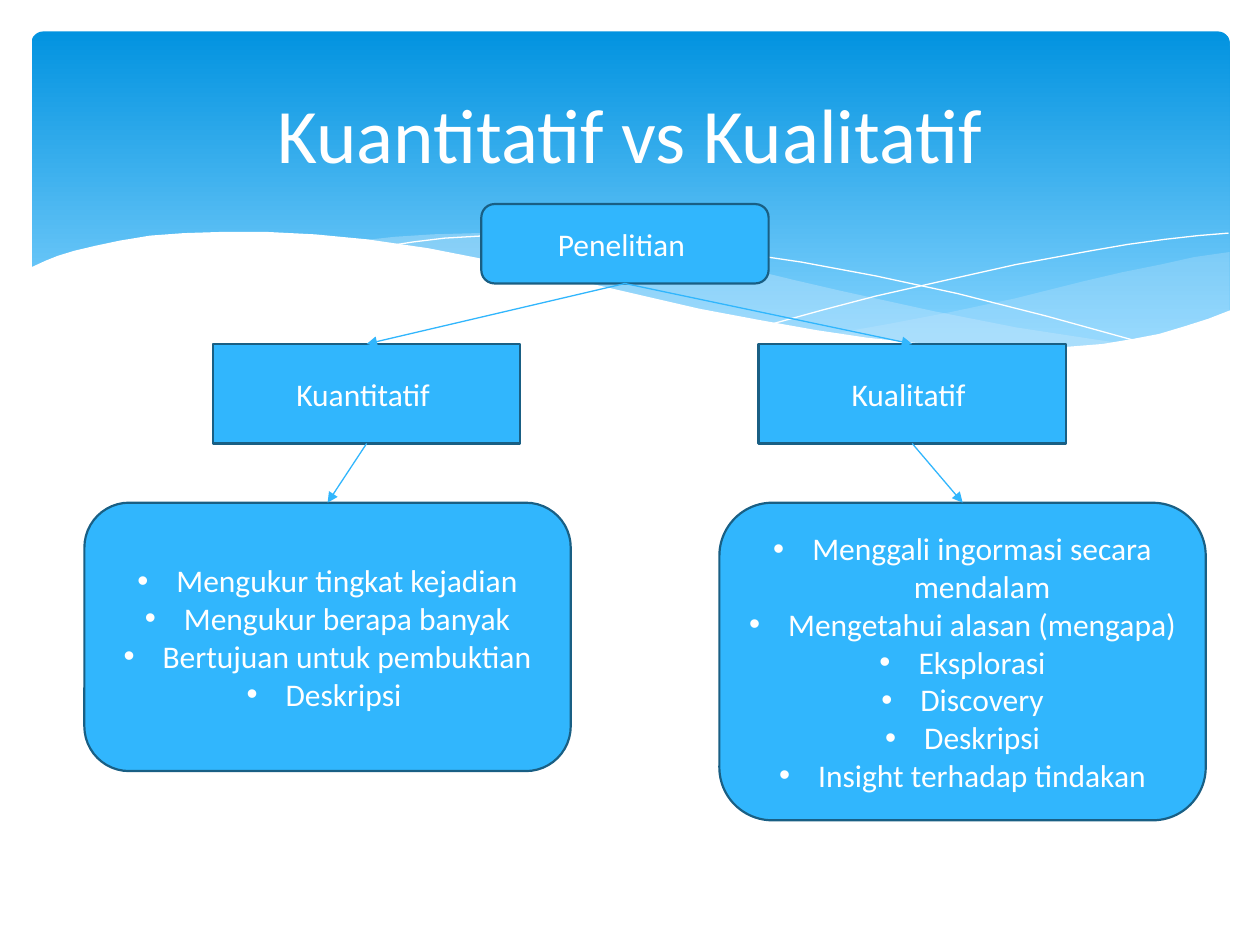
from lxml.etree import SubElement as Sub
from pptx import Presentation
from pptx.dml.color import RGBColor
from pptx.enum.shapes import MSO_CONNECTOR as Conn, MSO_SHAPE as Shape
from pptx.enum.text import MSO_ANCHOR as Anchor, PP_ALIGN as Align
from pptx.oxml.ns import qn
from pptx.util import Inches, Pt

FONT = "Calibri"
HUES = {"deep": "0293E0", "pale": "83D3FE", "mist": "C6E7FC",
        "box": "31B6FD", "edge": "195F84", "white": "FFFFFF"}

# Waves of the banner, in inches on the slide
SWELL = [(9.76, 2), (9.48, 2.04), (9.21, 2.1), (8.91, 2.16), (8.61, 2.23),
         (8.05, 2.37), (7.53, 2.48), (7.06, 2.57), (6.61, 2.65), (6.91, 2.69),
         (7.19, 2.72), (7.45, 2.75), (7.81, 2.77), (8.14, 2.78), (8.54, 2.76),
         (8.81, 2.73), (9.05, 2.69), (9.28, 2.63), (9.49, 2.57), (9.76, 2.47)]
RIDGE = [(8.93, 2.73), (8.66, 2.69), (8.07, 2.6), (7.41, 2.47), (6.68, 2.31),
         (6.29, 2.22), (5.84, 2.11), (5.41, 2.03), (5.02, 1.96), (4.65, 1.91),
         (4.2, 1.87), (3.8, 1.85), (3.44, 1.86), (3.13, 1.88), (2.86, 1.91),
         (3.23, 1.96), (3.62, 2.03), (4.04, 2.11), (4.49, 2.22), (4.91, 2.32),
         (5.3, 2.4), (5.66, 2.48), (6.01, 2.55), (6.34, 2.61), (6.65, 2.66),
         (6.95, 2.7), (7.22, 2.74), (7.48, 2.76), (7.73, 2.77), (8.07, 2.78),
         (8.38, 2.78), (8.67, 2.76)]
FALL = [(3.09, 1.95), (3.28, 1.92), (3.53, 1.89), (3.87, 1.87), (4.16, 1.87),
        (4.5, 1.88), (4.89, 1.9), (5.33, 1.94), (5.82, 2), (6.36, 2.08),
        (6.95, 2.19), (7.6, 2.33), (8.31, 2.51), (9.07, 2.72)]
RISE = [(6.13, 2.57), (6.53, 2.46), (6.95, 2.35), (7.48, 2.23), (8.06, 2.1),
        (8.66, 1.99), (8.95, 1.94), (9.24, 1.9), (9.51, 1.87), (9.75, 1.85)]
SHORE = [(9.77, 2.46), (9.59, 2.53), (9.4, 2.59), (9.2, 2.65), (8.99, 2.69),
         (8.75, 2.73), (8.5, 2.75), (8.23, 2.77), (7.93, 2.76), (7.61, 2.75),
         (7.26, 2.72), (6.88, 2.68), (6.48, 2.62), (6.03, 2.54), (5.55, 2.45),
         (5.03, 2.33), (4.47, 2.2), (3.91, 2.07), (3.4, 1.97), (2.92, 1.9),
         (2.5, 1.86), (2.11, 1.84), (1.77, 1.84), (1.46, 1.85), (1.19, 1.87),
         (0.95, 1.91), (0.76, 1.95), (0.59, 1.99), (0.46, 2.03), (0.36, 2.07),
         (0.23, 2.13), (0.23, 3.29), (9.77, 3.29)]

# Wording of the two branches
QUANT = ["Mengukur tingkat kejadian", "Mengukur berapa banyak",
         "Bertujuan untuk pembuktian", "Deskripsi "]
QUAL = ["Menggali ingormasi secara mendalam", "Mengetahui alasan (mengapa)",
        "Eksplorasi", "Discovery", "Deskripsi", "Insight terhadap tindakan"]


def hue(name):
    return RGBColor.from_string(HUES[name])


def style(para, size):
    para.alignment = Align.CENTER
    para.font.size = Pt(size)
    para.font.name = FONT
    para.font.color.rgb = hue("white")


def bullet(para):
    props = para._p.get_or_add_pPr()
    props.set("marL", str(Inches(0.31)))
    props.set("indent", str(-Inches(0.31)))
    Sub(props, qn("a:buFont")).set("typeface", "Arial")
    Sub(props, qn("a:buChar")).set("char", "•")


def wave(slide, points, fill=None, alpha=100):
    """A filled wave, or a white hairline when no fill is named."""
    spots = [(Inches(x), Inches(y)) for x, y in points]
    pen = slide.shapes.build_freeform(*spots[0])
    pen.add_line_segments(spots[1:], close=bool(fill))
    form = pen.convert_to_shape()
    form.shadow.inherit = False
    if fill is None:
        form.fill.background()
        form.line.color.rgb = hue("white")
        form.line.width = Pt(0)
        return
    form.fill.solid()
    form.fill.fore_color.rgb = hue(fill)
    form.line.fill.background()
    if alpha < 100:
        tone = form._element.spPr.find(".//" + qn("a:srgbClr"))
        Sub(tone, qn("a:alpha")).set("val", str(alpha * 1000))


def banner(slide, box):
    panel = slide.shapes.add_shape(Shape.ROUNDED_RECTANGLE, *map(Inches, box))
    panel.adjustments[0] = 0.034
    panel.shadow.inherit = False
    panel.line.fill.background()
    panel.fill.gradient()
    panel.fill.gradient_angle = 270
    stops = zip(panel.fill.gradient_stops, ("deep", "pale"), (0, 0.9))
    for stop, name, place in stops:
        stop.color.rgb = hue(name)
        stop.position = place
    wave(slide, SWELL, "mist", 29)
    wave(slide, RIDGE, "mist", 40)
    wave(slide, FALL)
    wave(slide, RISE)
    wave(slide, SHORE, "white")


def heading(slide, box, text):
    title = slide.shapes.title
    title.left, title.top, title.width, title.height = map(Inches, box)
    title.text_frame.text = text
    title.text_frame.vertical_anchor = Anchor.MIDDLE
    style(title.text_frame.paragraphs[0], 44)
    # Bring the title in front of the banner
    slide.shapes._spTree.append(title._element)


def node(slide, box, lines, kind=Shape.ROUNDED_RECTANGLE, dots=False):
    shape = slide.shapes.add_shape(kind, *map(Inches, box))
    shape.shadow.inherit = False
    shape.fill.solid()
    shape.fill.fore_color.rgb = hue("box")
    shape.line.color.rgb = hue("edge")
    shape.line.width = Pt(1.25)
    frame = shape.text_frame
    frame.word_wrap = True
    frame.vertical_anchor = Anchor.MIDDLE
    frame.text = "\n".join(lines)
    for para in frame.paragraphs:
        if dots:
            bullet(para)
        style(para, 18)
    return shape


def arrow(slide, upper, lower):
    """Join the bottom of one node to the top of the next."""
    link = slide.shapes.add_connector(Conn.STRAIGHT, 0, 0, 0, 0)
    link.begin_connect(upper, 2)
    link.end_connect(lower, 0)
    link.line.color.rgb = hue("box")
    link.line.width = Pt(0.75)
    Sub(link.line._get_or_add_ln(), qn("a:tailEnd")).set("type", "triangle")
    Sub(link._element.spPr, qn("a:effectLst"))


def branch(slide, root, name, head_box, list_box, lines):
    head = node(slide, head_box, [name], Shape.RECTANGLE)
    body = node(slide, list_box, lines, dots=True)
    arrow(slide, root, head)
    arrow(slide, head, body)


def main():
    deck = Presentation()
    deck.slide_width, deck.slide_height = Inches(10), Inches(7.5)
    slide = deck.slides.add_slide(deck.slide_layouts[5])
    banner(slide, (0.25, 0.25, 9.51, 2.7))
    heading(slide, (0.5, 0.37, 9, 1.37), "Kuantitatif vs Kualitatif")
    # Tree: one root, two branches
    root = node(slide, (3.82, 1.62, 2.28, 0.63), ["Penelitian "])
    branch(slide, root, "Kuantitatif ", (1.69, 2.73, 2.44, 0.79),
           (0.67, 3.99, 3.86, 2.13), QUANT)
    branch(slide, root, "Kualitatif ", (6.02, 2.73, 2.44, 0.79),
           (5.71, 3.99, 3.86, 2.52), QUAL)
    deck.save("out.pptx")


if __name__ == "__main__":
    main()
